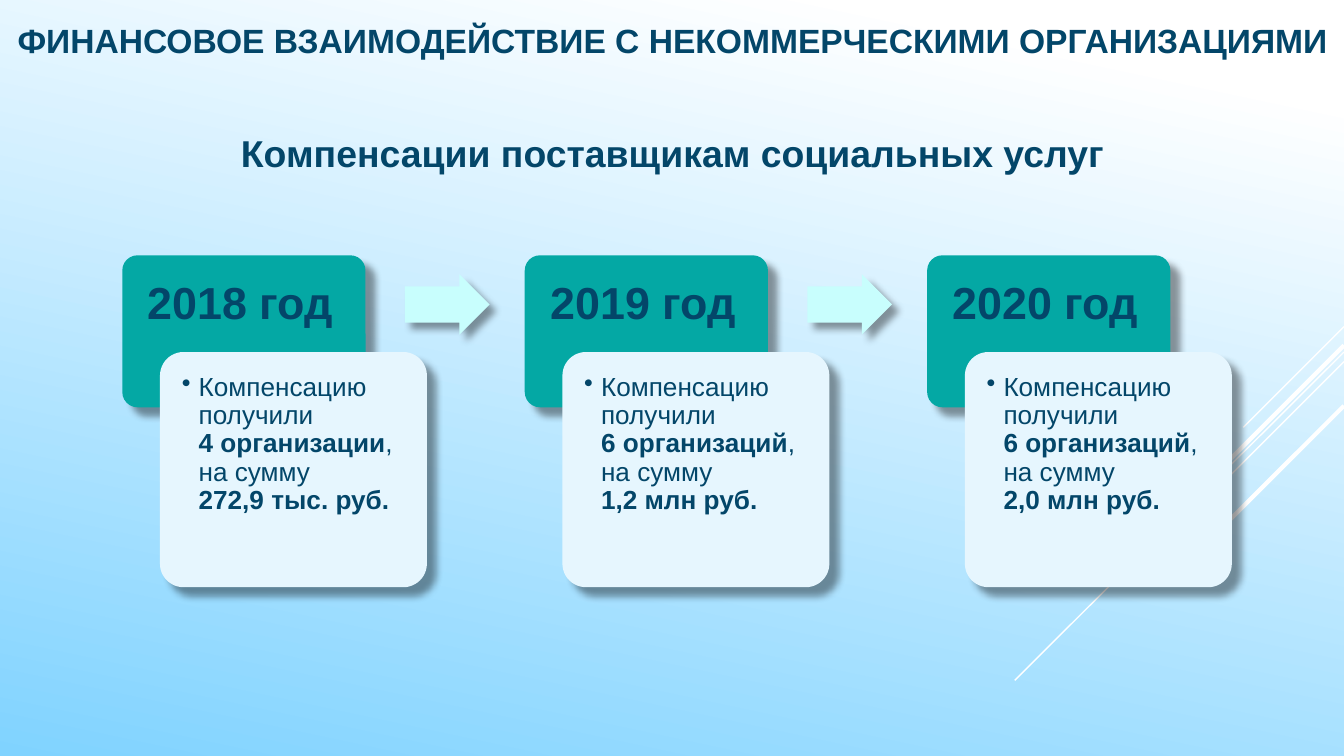
"""Build a slide on yearly compensation paid to social service providers."""
from dataclasses import dataclass

from lxml import etree
from pptx import Presentation
from pptx.dml.color import RGBColor
from pptx.enum import shapes, text
from pptx.oxml import ns
from pptx.util import Pt

NAVY, TEAL, PALE, MINT, WHITE = "034669", "04A8A4", "E6F6FE", "C8FEFD", "FFFFFF"
PITCH = 215.6


@dataclass
class Year:
    label: str
    count: str
    total: str


@dataclass
class Ray:
    y1: float
    x2: float
    y2: float
    width: float


YEARS = [
    Year("2018 год", "4 организации", "272,9 тыс. руб."),
    Year("2019 год", "6 организаций", "1,2 млн руб."),
    Year("2020 год", "6 организаций", "2,0 млн руб."),
]
RAYS = [
    Ray(175, 666, 229, 0.75),
    Ray(188.6, 543.6, 364.5, 0.75),
    Ray(193.7, 607.7, 306, 0.75),
    Ray(185, 617, 288, 2.25),
    Ray(217.4, 645, 292.3, 2.25),
]


def rgb(value: str) -> RGBColor:
    return RGBColor.from_string(value)


def add_text(p, content: str, *, size: float, bold: bool = False) -> None:
    r = p.add_run()
    r.text = content
    r.font.name = "Arial"
    r.font.size = Pt(size)
    r.font.bold = bold
    r.font.color.rgb = rgb(NAVY)


def add_ray(slide, ray: Ray) -> None:
    c = slide.shapes.add_connector(
        shapes.MSO_CONNECTOR.STRAIGHT, Pt(720), Pt(ray.y1), Pt(ray.x2), Pt(ray.y2))
    c.line.color.rgb = rgb(WHITE)
    c.line.width = Pt(ray.width)
    etree.SubElement(c._element.spPr, ns.qn("a:effectLst"))


def add_shadow(s, distance: float) -> None:
    s.shadow.inherit = False
    effects = s._element.spPr.find(ns.qn("a:effectLst"))
    shadow = etree.SubElement(
        effects, ns.qn("a:outerShdw"), blurRad=str(Pt(4)), dist=str(Pt(distance)),
        dir="2700000", algn="tl", rotWithShape="0")
    color = etree.SubElement(shadow, ns.qn("a:srgbClr"), val="000000")
    etree.SubElement(color, ns.qn("a:alpha"), val="40000")


def add_block(slide, kind, box: tuple, fill: str, adjust: tuple, distance: float = 7):
    s = slide.shapes.add_shape(kind, *map(Pt, box))
    for i, value in enumerate(adjust):
        s.adjustments[i] = value
    s.fill.solid()
    s.fill.fore_color.rgb = rgb(fill)
    s.line.fill.background()
    add_shadow(s, distance)
    return s


def start_text(s, inset: float):
    tf = s.text_frame
    tf.word_wrap = True
    tf.vertical_anchor = text.MSO_ANCHOR.TOP
    tf.margin_left = tf.margin_top = tf.margin_right = tf.margin_bottom = Pt(inset)
    p = tf.paragraphs[0]
    p.alignment = text.PP_ALIGN.LEFT
    p.line_spacing = 0.9
    return p


def add_bullet(p, indent: float) -> None:
    pr = p._p.get_or_add_pPr()
    pr.set("marL", str(Pt(indent)))
    pr.set("indent", str(-Pt(indent)))
    etree.SubElement(pr, ns.qn("a:buChar"), char="•")


def add_year(slide, year: Year, x: float) -> None:
    rounded = shapes.MSO_SHAPE.ROUNDED_RECTANGLE
    tile = add_block(slide, rounded, (x, 136.8, 130.3, 81.4), TEAL, (0.1,))
    add_text(start_text(tile, 11.3), year.label, size=24, bold=True)

    card = add_block(slide, rounded, (x + 20.2, 188.6, 143, 126), PALE, (0.1,))
    p = start_text(card, 8)
    add_bullet(p, 9)
    add_text(p, "Компенсацию получили", size=14)
    p.add_line_break()
    add_text(p, year.count, size=14, bold=True)
    add_text(p, ", на сумму", size=14)
    p.add_line_break()
    add_text(p, year.total, size=14, bold=True)


def add_arrow(slide, x: float) -> None:
    add_block(slide, shapes.MSO_SHAPE.RIGHT_ARROW, (x, 146.9, 45.4, 32.4),
              MINT, (0.6, 0.5), 5)


def set_background(slide) -> None:
    fill = slide.background.fill
    fill.gradient()
    fill.gradient_angle = 258
    for stop, color, position in zip(fill.gradient_stops, (WHITE, "80D3FF"), (0.1, 1)):
        stop.color.rgb = rgb(color)
        stop.position = position


def set_title(slide, content: str) -> None:
    s = slide.shapes.title
    s.left, s.top, s.width, s.height = Pt(2.2), Pt(7.2), Pt(732), Pt(29)
    tf = s.text_frame
    tf.word_wrap = False
    tf.auto_size = text.MSO_AUTO_SIZE.SHAPE_TO_FIT_TEXT
    tf.vertical_anchor = text.MSO_ANCHOR.TOP
    tf.paragraphs[0].alignment = text.PP_ALIGN.LEFT
    add_text(tf.paragraphs[0], content, size=18, bold=True)


def add_subtitle(slide, content: str) -> None:
    s = slide.shapes.add_textbox(Pt(65.5), Pt(66.2), Pt(589.7), Pt(31.7))
    s.text_frame.word_wrap = True
    p = s.text_frame.paragraphs[0]
    p.alignment = text.PP_ALIGN.CENTER
    add_text(p, content, size=20, bold=True)


def main() -> None:
    prs = Presentation()
    prs.slide_width, prs.slide_height = Pt(720), Pt(405)
    slide = prs.slides.add_slide(prs.slide_layouts[5])
    set_background(slide)
    set_title(slide, "ФИНАНСОВОЕ ВЗАИМОДЕЙСТВИЕ С НЕКОММЕРЧЕСКИМИ ОРГАНИЗАЦИЯМИ")
    for ray in RAYS:
        add_ray(slide, ray)
    add_subtitle(slide, "Компенсации поставщикам социальных услуг")
    for i, year in enumerate(YEARS):
        x = 65.5 + i * PITCH
        add_year(slide, year, x)
        if i < len(YEARS) - 1:
            add_arrow(slide, x + 151.4)
    prs.save("out.pptx")


if __name__ == "__main__":
    main()
